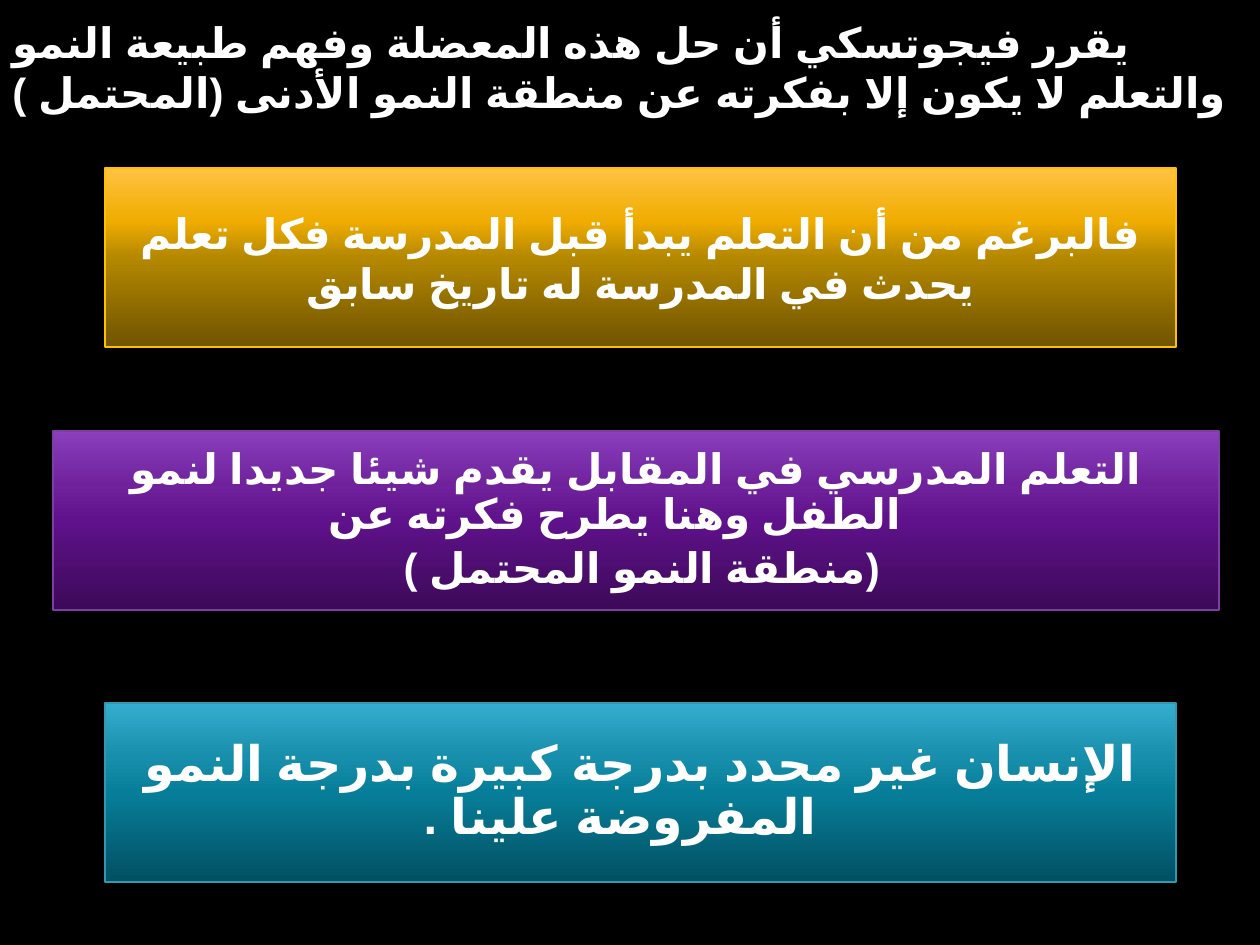
import copy

import pptx
import pptx.dml.color
import pptx.enum.lang
import pptx.enum.shapes
import pptx.enum.text
import pptx.oxml.ns
import pptx.util

PX = 914400 / 126
FONT = "Arial"
COLORS = {"background": "000000", "text": "FFFFFF"}
BANNERS = {
    "gold": {"line": "FFC000", "stops": ["705400", "B48800", "F0AC00", "FFC342"]},
    "purple": {"line": "7D3DA1", "stops": ["3C0958", "5F128B", "6F229C", "8B3FBD"]},
    "teal": {"line": "3497AE", "stops": ["015062", "077E99", "178EAB", "35ADCE"]},
}
STOP_POSITIONS = [0, 50, 70, 100]


def px(n):
    """Turn px into EMU."""
    return pptx.util.Emu(round(n * PX))


def rgb(value):
    """Turn a hex string into a colour."""
    return pptx.dml.color.RGBColor.from_string(value)


def write_text(tf, text, size):
    """Fill a text frame with bold white Arabic text, centred vertically."""
    tf.word_wrap = True
    tf.vertical_anchor = pptx.enum.text.MSO_ANCHOR.MIDDLE
    tf.text = text
    for p in tf.paragraphs:
        for r in p.runs:
            r.font.name = FONT
            r.font.size = pptx.util.Pt(size)
            r.font.bold = True
            r.font.language_id = pptx.enum.lang.MSO_LANGUAGE_ID.ARABIC
            r.font.color.rgb = rgb(COLORS["text"])
            cs = r.font._element.makeelement(pptx.oxml.ns.qn("a:cs"), {"typeface": FONT})
            r.font._element.append(cs)


def set_rtl(p, size):
    """Give a paragraph right-to-left order, a hanging indent and tight lines."""
    p.line_spacing = 0.9
    p.space_before = pptx.util.Pt(round(size * 0.2, 1))
    pPr = p._p.get_or_add_pPr()
    pPr.set("rtl", "1")
    pPr.set("marL", str(px(54)))
    pPr.set("indent", str(-px(54)))


def fill_gradient(fill, stops):
    """Fill with a gradient that runs from bottom to top."""
    fill.gradient()
    fill.gradient_angle = 90
    gs_list = fill._xPr.find(".//" + pptx.oxml.ns.qn("a:gsLst"))
    while len(gs_list) < len(stops):
        gs_list.append(copy.deepcopy(gs_list[0]))
    for stop, color, position in zip(fill.gradient_stops, stops, STOP_POSITIONS):
        stop.color.rgb = rgb(color)
        stop.position = position / 100


def add_title(slide, box, text):
    """Add the heading text box."""
    s = slide.shapes.add_textbox(*map(px, box))
    write_text(s.text_frame, text, 24)


def add_banner(slide, box, colors, text, size, rtl=True):
    """Add a gradient rectangle with centred text."""
    s = slide.shapes.add_shape(pptx.enum.shapes.MSO_SHAPE.RECTANGLE, *map(px, box))
    s.shadow.inherit = False
    fill_gradient(s.fill, colors["stops"])
    s.line.color.rgb = rgb(colors["line"])
    s.line.width = pptx.util.Pt(0.75)
    write_text(s.text_frame, text, size)
    for p in s.text_frame.paragraphs:
        p.alignment = pptx.enum.text.PP_ALIGN.CENTER
        if rtl:
            set_rtl(p, size)


def main():
    """Build the slide and save it."""
    prs = pptx.Presentation()
    prs.slide_width, prs.slide_height = px(1260), px(945)
    slide = prs.slides.add_slide(prs.slide_layouts[6])
    slide.background.fill.solid()
    slide.background.fill.fore_color.rgb = rgb(COLORS["background"])
    add_title(slide, (0, 10, 1260, 113),
              "يقرر فيجوتسكي أن حل هذه المعضلة وفهم طبيعة النمو والتعلم لا يكون إلا "
              "بفكرته عن منطقة النمو الأدنى (المحتمل )")
    add_banner(slide, (105, 168, 1071, 179), BANNERS["gold"],
               "فالبرغم من أن التعلم يبدأ قبل المدرسة فكل تعلم يحدث في المدرسة له تاريخ سابق",
               24, rtl=False)
    add_banner(slide, (53, 431, 1166, 179), BANNERS["purple"],
               "التعلم المدرسي في المقابل يقدم شيئا جديدا لنمو الطفل وهنا يطرح فكرته عن \n"
               "(منطقة النمو المحتمل ) ", 24)
    add_banner(slide, (105, 703, 1071, 179), BANNERS["teal"],
               "الإنسان غير محدد بدرجة كبيرة بدرجة النمو المفروضة علينا . ", 28)
    prs.save("out.pptx")


if __name__ == "__main__":
    main()
